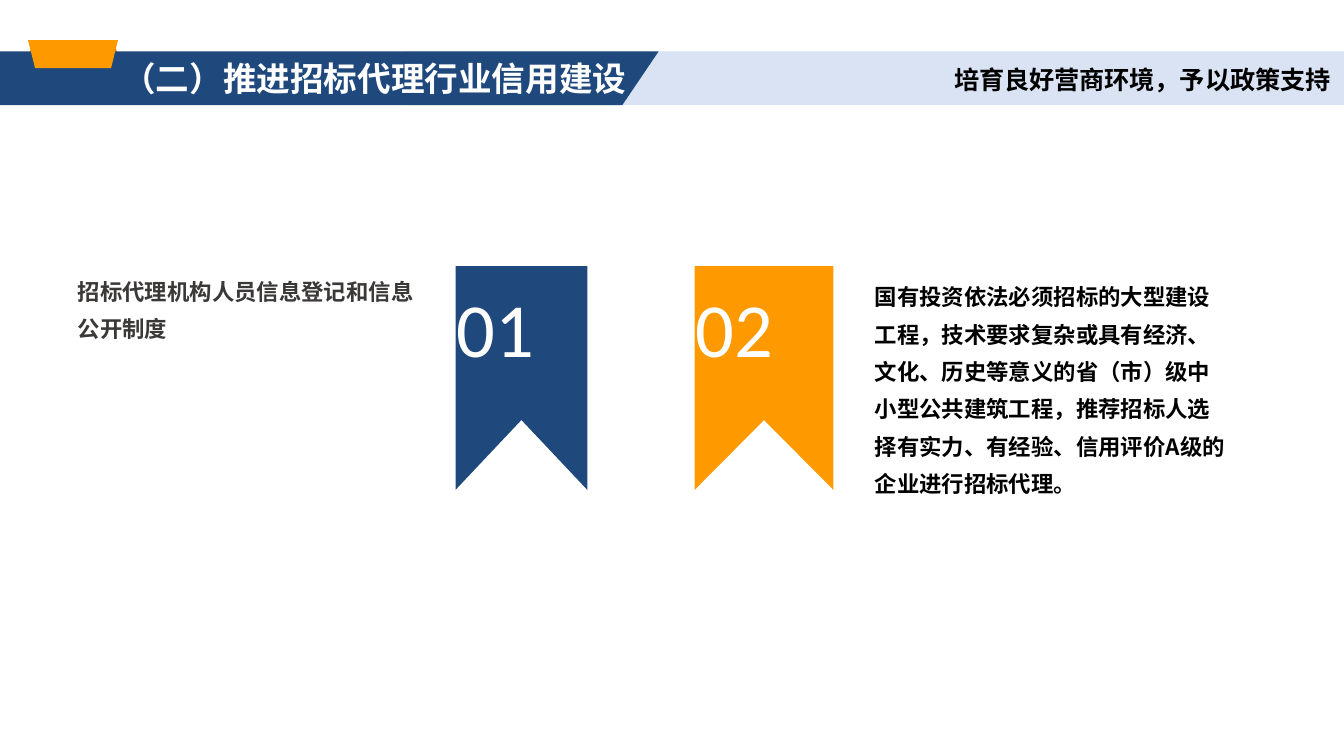
"""Builds a slide on credit building in the tendering agency industry."""
from lxml.etree import SubElement
from pptx import Presentation
from pptx.dml.color import RGBColor
from pptx.enum.shapes import MSO_SHAPE as SHAPE
from pptx.enum.text import MSO_ANCHOR as ANCHOR, MSO_AUTO_SIZE as AUTO, PP_ALIGN as ALIGN
from pptx.oxml.ns import qn
from pptx.util import Cm, Pt

NAVY = RGBColor(0x1F, 0x48, 0x7C)
ORANGE = RGBColor(0xFF, 0x99, 0x00)
RUST = RGBColor(0xCC, 0x66, 0x00)
PALE = RGBColor(0xDA, 0xE3, 0xF3)
GREY = RGBColor(0x3B, 0x38, 0x38)
WHITE = RGBColor(0xFF, 0xFF, 0xFF)
BLACK = RGBColor(0, 0, 0)
CJK = "Noto Sans CJK SC"
LATIN = "Calibri"
BODY = {"line_spacing": Pt(20), "space_before": Pt(0)}


def apply(target, values):
    """Sets each named attribute on the target."""
    for name, value in values.items():
        setattr(target, name, value)


def paint(sp, color):
    """Gives a shape a plain fill with no line or shadow."""
    sp.shadow.inherit = False
    sp.fill.solid()
    sp.fill.fore_color.rgb = color
    sp.line.fill.background()
    return sp


def add_block(s, kind, box, color):
    """Adds a filled preset shape."""
    return paint(s.shapes.add_shape(kind, *map(Cm, box)), color)


def add_outline(s, points, color):
    """Adds a filled polygon through points in centimetres."""
    pts = [(Cm(x), Cm(y)) for x, y in points]
    fb = s.shapes.build_freeform(*pts[0])
    fb.add_line_segments(pts[1:], close=True)
    return paint(fb.convert_to_shape(), color)


def write(sp, text, size, color, font=CJK, bold=True, margins=(0.25, 0.13), para=None):
    """Fills a shape with one formatted paragraph."""
    tf = sp.text_frame
    x, y = map(Cm, margins)
    apply(tf, {"word_wrap": True, "auto_size": AUTO.NONE, "vertical_anchor": ANCHOR.TOP,
               "margin_left": x, "margin_right": x, "margin_top": y, "margin_bottom": y})
    p = tf.paragraphs[0]
    apply(p, {"alignment": ALIGN.LEFT, **(para or {})})
    r = p.add_run()
    r.text = text
    apply(r.font, {"size": Pt(size), "bold": bold, "name": font})
    r.font.color.rgb = color
    SubElement(r.font._element, qn("a:ea"), typeface=CJK)


def place(sp, box):
    """Moves a placeholder to the front and into its box."""
    apply(sp, dict(zip(("left", "top", "width", "height"), map(Cm, box))))
    sp.element.getparent().append(sp.element)
    return sp


def add_body(sp, box, text, color, font):
    """Writes an unbulleted paragraph into a body placeholder."""
    write(place(sp, box), text, 12, color, font, para=BODY)
    pPr = sp.text_frame.paragraphs[0]._p.get_or_add_pPr()
    apply_indent = {"marL": "0", "indent": "0"}
    for name, value in apply_indent.items():
        pPr.set(name, value)
    SubElement(pPr, qn("a:buNone"))


def add_ribbon(s, left, width, number, color):
    """Adds a numbered ribbon with a notched foot."""
    top, notch, foot = 5.03, 7.94, 9.26
    right = left + width
    sp = add_outline(s, [(left, top), (right, top), (right, foot),
                         (left + width / 2, notch), (left, foot)], color)
    write(sp, number, 41, WHITE, LATIN, False, (0.02, 0.28))


def add_header(s):
    """Adds the banner, its folded tab, the title and the tagline."""
    add_block(s, SHAPE.RECTANGLE, (7.67, 0.97, 17.73, 1.02), PALE)
    add_block(s, SHAPE.TRAPEZOID, (0.5, 0.76, 1.78, 0.51), RUST)
    add_outline(s, [(0, 0.97), (12.45, 0.97), (11.76, 1.99), (0, 1.99)], NAVY)
    add_block(s, SHAPE.TRAPEZOID, (0.53, 0.76, 1.7, 0.53), ORANGE).rotation = 180
    title = place(s.shapes.title, (1.98, 0.91, 10.57, 1.12))
    write(title, "（二）推进招标代理行业信用建设", 18, WHITE, margins=(0.33, 0.18))
    tag = s.shapes.add_textbox(*map(Cm, (12.83, 1.09, 12.57, 0.84)))
    write(tag, "培育良好营商环境，予以政策支持", 13.5, BLACK, para={"alignment": ALIGN.RIGHT})


def main():
    """Builds and saves the slide."""
    prs = Presentation()
    apply(prs, {"slide_width": Cm(25.4), "slide_height": Cm(14.29)})
    s = prs.slides.add_slide(prs.slide_layouts.get_by_name("Two Content"))
    left, right = s.placeholders[1], s.placeholders[2]
    add_header(s)
    add_ribbon(s, 8.61, 2.49, "01", NAVY)
    add_ribbon(s, 13.13, 2.62, "02", ORANGE)
    add_body(left, (1.22, 4.93, 6.91, 1.63),
             "招标代理机构人员信息登记和信息公开制度", GREY, LATIN)
    add_body(right, (16.28, 5.03, 7.14, 4.45),
             "国有投资依法必须招标的大型建设工程，技术要求复杂或具有经济、文化、历史等意义的"
             "省（市）级中小型公共建筑工程，推荐招标人选择有实力、有经验、信用评价A级的企业"
             "进行招标代理。", BLACK, CJK)
    for sp in list(s.placeholders):
        if not sp.text_frame.text:
            sp.element.getparent().remove(sp.element)
    prs.save("out.pptx")


if __name__ == "__main__":
    main()
